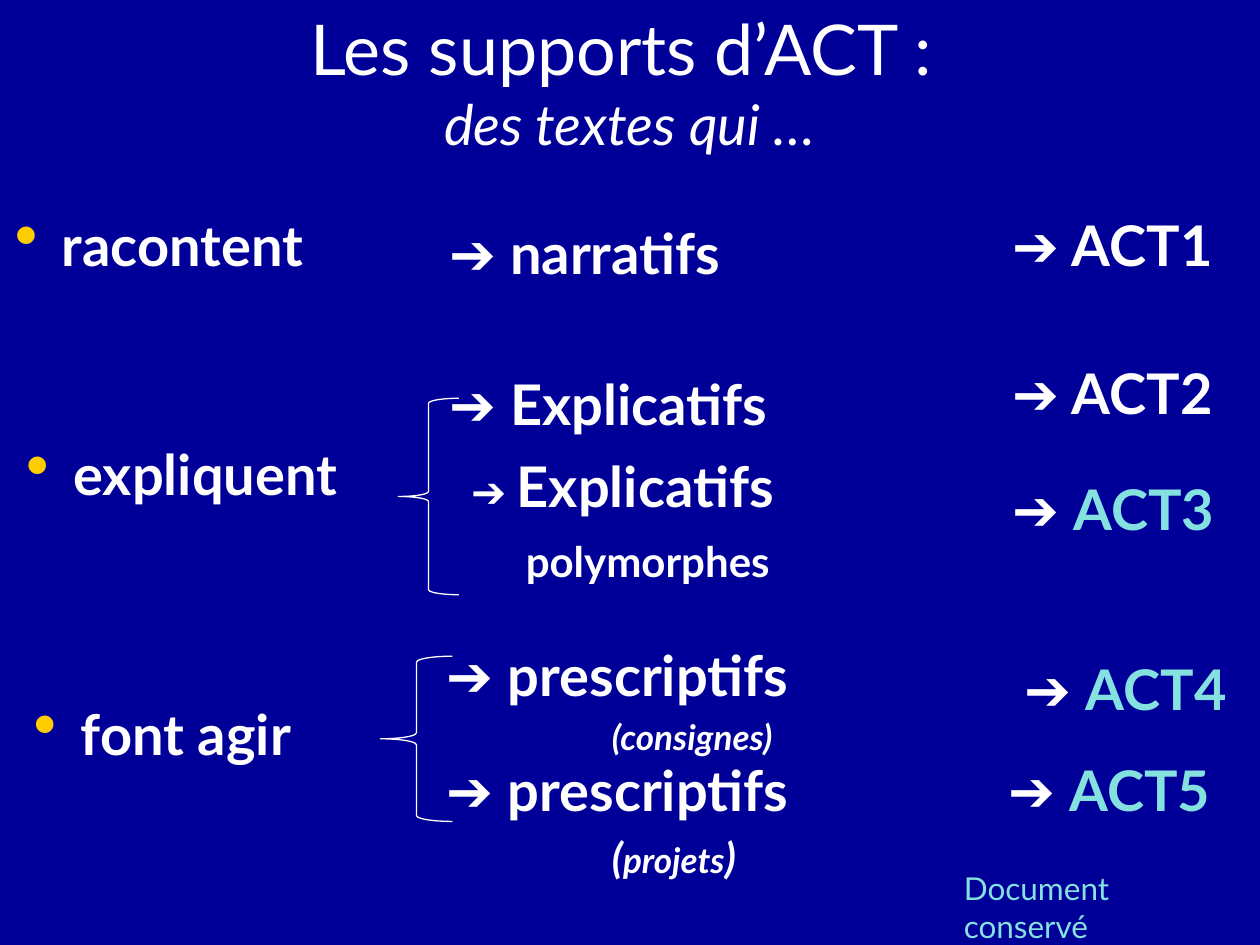
from dataclasses import dataclass

from lxml import etree
from pptx import Presentation
from pptx.dml.color import RGBColor
from pptx.enum.shapes import MSO_SHAPE as Shape
from pptx.enum.text import MSO_ANCHOR as Anchor, MSO_AUTO_SIZE as AutoSize, PP_ALIGN as Align
from pptx.oxml.ns import qn
from pptx.util import Cm, Pt


@dataclass(frozen=True)
class Theme:
    font: str = "Lato"
    back: RGBColor = RGBColor(0x00, 0x00, 0x99)
    text: RGBColor = RGBColor(0xFF, 0xFF, 0xFF)
    accent: RGBColor = RGBColor(0x85, 0xE0, 0xE0)
    bullet: str = "FFCC00"
    title: int = 40
    main: int = 32
    medium: int = 24
    detail: int = 20
    note: int = 18


T = Theme()
ARROW = "➔ "
ROW = 1.78
CATEGORIES = [  # text, left, top, width, height, anchor
    ("racontent", 0.05, 3.94, 7.19, ROW, Anchor.BOTTOM),
    ("expliquent", 0.28, 8.56, 8.05, ROW, Anchor.BOTTOM),
    ("font agir", 0.43, 13.97, 11.23, 2.11, Anchor.TOP),
]
ACTS = [  # text, left, top, width, colour, alignment
    ("ACT1", 20.17, 3.94, 5.08, T.text, Align.LEFT),
    ("ACT2", 20.17, 6.93, 5.23, T.text, Align.LEFT),
    ("ACT3", 20.17, 9.27, 5.08, T.accent, Align.LEFT),
    ("ACT4", 20.09, 12.9, 5.21, T.accent, Align.CENTER),
    ("ACT5", 20.09, 14.94, 5.33, T.accent, Align.LEFT),
]
BRACES = [(8.03, 8.03, 1.22, 3.96), (7.67, 13.23, 1.45, 3.33)]


def add_run(p, text, size=T.main, color=T.text, bold=True, italic=False):
    r = p.add_run()
    r.text = text
    values = {"name": T.font, "size": Pt(size), "bold": bold, "italic": italic}
    for name, value in values.items():
        setattr(r.font, name, value)
    r.font.color.rgb = color


def add_box(s, left, top, width, height, anchor=Anchor.BOTTOM):
    tf = s.shapes.add_textbox(Cm(left), Cm(top), Cm(width), Cm(height)).text_frame
    tf.word_wrap = True
    tf.vertical_anchor = anchor
    return tf


def add_title(s):
    title = s.shapes.title
    frame = {"left": 1.27, "top": 0.05, "width": 22.86, "height": 3.18}
    for name, value in frame.items():
        setattr(title, name, Cm(value))
    tf = title.text_frame
    tf.auto_size = AutoSize.NONE
    tf.vertical_anchor = Anchor.MIDDLE
    p = tf.paragraphs[0]
    p.alignment = Align.CENTER
    add_run(p, "Les supports d’ACT : ", T.title, bold=False)
    p.add_line_break()
    add_run(p, "des textes qui …", T.main, bold=False, italic=True)


def add_category(s, text, *place):
    p = add_box(s, *place).paragraphs[0]
    pPr = p._p.get_or_add_pPr()
    indent = Cm(0.95)
    pPr.set("marL", str(indent))
    pPr.set("indent", str(-indent))
    color = etree.SubElement(pPr, qn("a:buClr"))
    etree.SubElement(color, qn("a:srgbClr")).set("val", T.bullet)
    etree.SubElement(pPr, qn("a:buSzPct")).set("val", "120000")
    etree.SubElement(pPr, qn("a:buChar")).set("char", "•")
    add_run(p, text)


def add_arrow_text(s, text, place, color=T.text, align=Align.LEFT, arrow_size=T.main):
    tf = add_box(s, *place)
    p = tf.paragraphs[0]
    p.alignment = align
    add_run(p, ARROW, arrow_size)
    add_run(p, text, color=color)
    return tf


def add_detail(tf, parts):
    """Add a centred italic line made of (text, size) parts."""
    p = tf.add_paragraph()
    p.alignment = Align.CENTER
    p.space_before = Pt(0.2 * max(size for _, size in parts))
    for text, size in parts:
        add_run(p, text, size, italic=True)


def add_text_types(s):
    add_arrow_text(s, "narratifs", (8.81, 4.11, 10.36, ROW))
    add_arrow_text(s, "Explicatifs", (8.81, 7.14, 11.23, ROW))

    tf = add_arrow_text(s, "Explicatifs", (9.25, 8.27, 9.09, 3.66), arrow_size=T.medium)
    p = tf.add_paragraph()
    p._p.get_or_add_pPr().set("marL", str(Cm(1.1)))
    p.line_spacing = Pt(1.2 * T.main)
    add_run(p, "polymorphes", T.medium)

    tf = add_arrow_text(s, "prescriptifs", (8.76, 13, 10.39, 2.39))
    add_detail(tf, [("(consignes)", T.detail)])
    tf = add_arrow_text(s, "prescriptifs", (8.76, 15.39, 9.65, 2.51))
    add_detail(tf, [("(", T.medium), ("projets", T.detail), (")", T.medium)])


def add_brace(s, *place):
    sp = s.shapes.add_shape(Shape.LEFT_BRACE, *map(Cm, place))
    sp.shadow.inherit = False
    sp.fill.background()
    sp.line.color.rgb = T.text
    sp.line.width = Pt(0.75)


def main():
    prs = Presentation()
    prs.slide_width, prs.slide_height = Cm(25.4), Cm(19.05)
    s = prs.slides.add_slide(prs.slide_layouts[5])
    s.background.fill.solid()
    s.background.fill.fore_color.rgb = T.back

    add_title(s)
    for category in CATEGORIES:
        add_category(s, *category)
    add_text_types(s)
    for text, left, top, width, color, align in ACTS:
        add_arrow_text(s, text, (left, top, width, ROW), color, align)
    for brace in BRACES:
        add_brace(s, *brace)
    note = add_box(s, 19.18, 17.4, 6, 1.02, Anchor.TOP)
    add_run(note.paragraphs[0], "Document conservé", T.note, T.accent, bold=False)
    prs.save("out.pptx")


if __name__ == "__main__":
    main()
